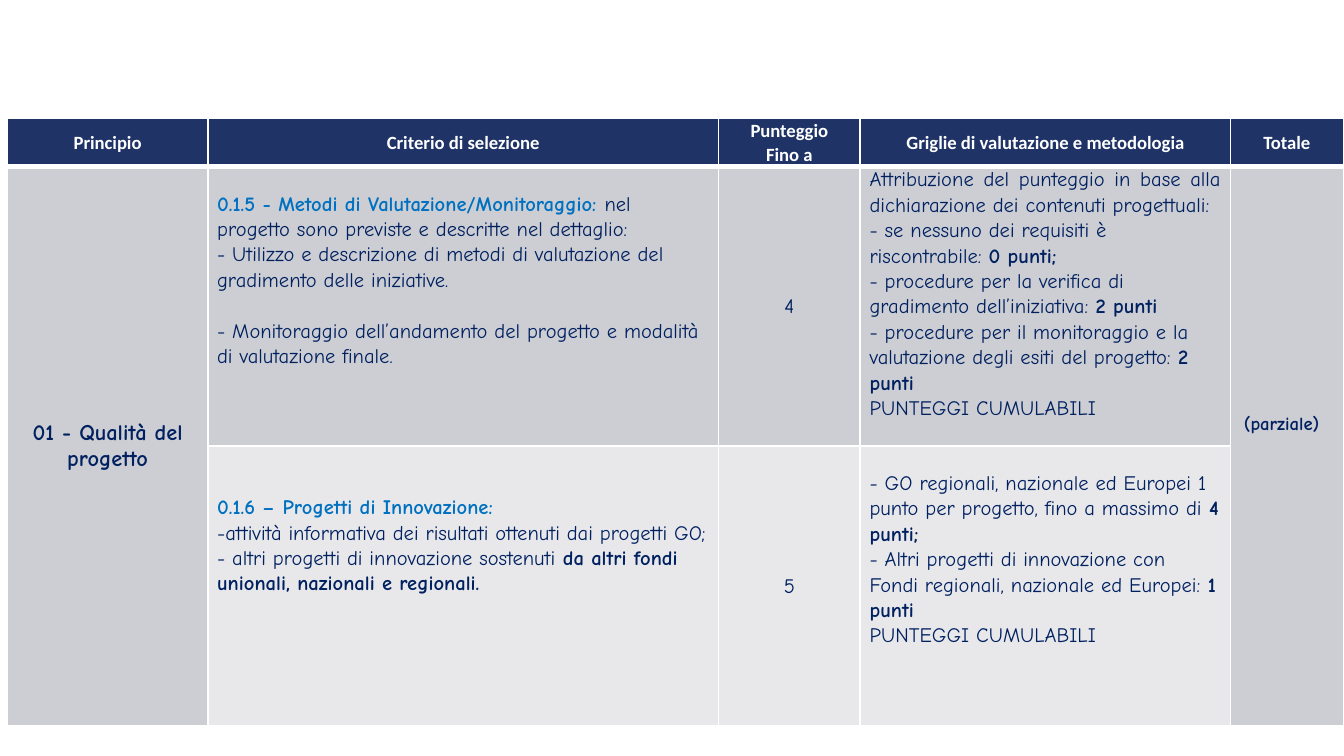
from lxml.etree import SubElement
from pptx import Presentation
from pptx.dml.color import RGBColor
from pptx.enum.text import MSO_ANCHOR as Anchor, PP_ALIGN as Align
from pptx.oxml.ns import qn
from pptx.util import Inches, Pt

COLORS = {
    "paper": "FEFFFE", "header": "1F3366", "dark": "CDCED3",
    "light": "E8E8EA", "navy": "002060", "sky": "0070C0",
}
LINE = 13.6  # height of one body line in points
INDENT_TOP = 0.18  # inches left free above a lowered text, per line
COLUMNS = (14.9, 38, 10.55, 27.55, 8.4)  # percent of slide width
ROWS = (6.22, 36.98, 36.98)  # percent of slide height
HEADINGS = (
    ["Principio"],
    ["Criterio di selezione"],
    ["Punteggio", "Fino a"],
    ["Griglie di valutazione e metodologia"],
    ["Totale"],
)


def plain(text):
    return text, "navy", False


def strong(text):
    return text, "navy", True


def accent(text):
    return text, "sky", True


class SlideBuilder:
    """Holds the style and the current slide; lengths are percent of the slide."""

    body_font = "Comic Neue"
    header_font = "Calibri"

    def __init__(self, deck):
        self.deck = deck
        self.page = deck.slides.add_slide(deck.slide_layouts[6])
        self.paint(self.page.background.fill, "paper")

    def x(self, percent):
        return round(self.deck.slide_width * percent / 100)

    def y(self, percent):
        return round(self.deck.slide_height * percent / 100)

    def paint(self, fill, color):
        fill.solid()
        fill.fore_color.rgb = RGBColor.from_string(COLORS[color])

    def table(self, left, top, columns, rows):
        frame = self.page.shapes.add_table(
            len(rows), len(columns), self.x(left), self.y(top),
            self.x(sum(columns)), self.y(sum(rows)))
        grid = frame.table
        grid.first_row = grid.horz_banding = False
        for column, width in zip(grid.columns, columns):
            column.width = self.x(width)
        for row, height in zip(grid.rows, rows):
            row.height = self.y(height)
        return grid

    def surface(self, cell, color, bottom=1):
        """Give a cell its borders and fill."""
        props = cell._tc.get_or_add_tcPr()
        for side, width in (("L", 1), ("R", 1), ("T", 1), ("B", bottom)):
            line = SubElement(props, qn(f"a:ln{side}"), w=str(Pt(width)))
            fill = SubElement(line, qn("a:solidFill"))
            SubElement(fill, qn("a:srgbClr"), val=COLORS["paper"])
        self.paint(cell.fill, color)

    def margins(self, cell, side=0.07, top=0, bottom=0):
        cell.margin_left = cell.margin_right = Inches(side)
        cell.margin_top, cell.margin_bottom = Inches(top), Inches(bottom)

    def text(self, cell, paras, size=11, font=None, align=Align.LEFT,
             anchor=Anchor.TOP, spacing=1.07, justified=(), gaps=()):
        """Write lists of (text, color, bold) runs; justified and gaps hold indexes."""
        cell.vertical_anchor = anchor
        frame = cell.text_frame
        for index, runs in enumerate(paras):
            para = frame.add_paragraph() if index else frame.paragraphs[0]
            para.alignment = Align.JUSTIFY if index in justified else align
            para.line_spacing = spacing
            if index in gaps:
                para.space_before = Pt(LINE)
            for words, color, bold in runs:
                span = para.add_run()
                span.text = words
                span.font.name = font or self.body_font
                span.font.size = Pt(size)
                span.font.bold = bold
                span.font.color.rgb = RGBColor.from_string(COLORS[color])


def main():
    deck = Presentation()
    deck.slide_width = Inches(10)
    deck.slide_height = deck.slide_width * 9 // 16
    builder = SlideBuilder(deck)
    grid = builder.table(0.56, 15.64, COLUMNS, ROWS)
    last = len(COLUMNS) - 1

    for column, lines in enumerate(HEADINGS):
        cell = grid.cell(0, column)
        builder.surface(cell, "header", bottom=3)
        builder.margins(cell)
        builder.text(cell, [[(line, "paper", True)] for line in lines], size=10,
                     font=builder.header_font, align=Align.CENTER,
                     anchor=Anchor.MIDDLE)

    for row, color in ((1, "dark"), (2, "light")):
        for column in range(len(COLUMNS)):
            merged = column in (0, last)
            builder.surface(grid.cell(row, column), "dark" if merged else color)
            builder.margins(grid.cell(row, column))
    for column in (0, last):
        grid.cell(1, column).merge(grid.cell(2, column))

    principle, total = grid.cell(1, 0), grid.cell(1, last)
    builder.margins(principle, side=0.1, top=0.05, bottom=0.05)
    builder.text(principle, [[strong("01 - Qualità del progetto")]], size=12,
                 align=Align.CENTER, anchor=Anchor.MIDDLE, spacing=1.0)
    builder.margins(total, side=0.1, top=0.05, bottom=0.37)
    builder.text(total, [[strong("(parziale)")]], size=10,
                 anchor=Anchor.MIDDLE, spacing=1.0)

    for row, points in ((1, "4"), (2, "5")):
        builder.text(grid.cell(row, 2), [[plain(points)]],
                     align=Align.CENTER, anchor=Anchor.MIDDLE)

    monitoring, innovation = grid.cell(1, 1), grid.cell(2, 1)
    builder.margins(monitoring, top=INDENT_TOP)
    builder.text(monitoring, [
        [accent("0.1.5 - Metodi di Valutazione/Monitoraggio: "),
         plain("nel progetto sono previste e descritte nel dettaglio:")],
        [plain("- Utilizzo e descrizione di metodi di valutazione del "
               "gradimento delle iniziative.")],
        [plain("- Monitoraggio dell’andamento del progetto e modalità "
               "di valutazione finale.")],
    ], gaps=(2,))
    builder.margins(innovation, top=2 * INDENT_TOP)
    builder.text(innovation, [
        [accent("0.1.6 – Progetti di Innovazione:")],
        [plain("-attività informativa dei risultati ottenuti dai progetti GO;")],
        [plain("- altri progetti di innovazione sostenuti "),
         strong("da altri fondi unionali, nazionali e regionali.")],
    ])

    builder.text(grid.cell(1, 3), [
        [plain("Attribuzione del punteggio in base alla dichiarazione "
               "dei contenuti progettuali:")],
        [plain("- se nessuno dei requisiti è riscontrabile: "), strong("0 punti;")],
        [plain("- procedure per la verifica di gradimento dell’iniziativa: "),
         strong("2 punti")],
        [plain("- procedure per il monitoraggio e la valutazione degli esiti "
               "del progetto: "), strong("2 punti")],
        [plain("PUNTEGGI CUMULABILI")],
    ], justified=(0, 4))
    builder.margins(grid.cell(2, 3), top=INDENT_TOP)
    builder.text(grid.cell(2, 3), [
        [plain("- GO regionali, nazionale ed Europei 1 punto per progetto, "
               "fino a massimo di "), strong("4 punti;")],
        [plain("- Altri progetti di innovazione con Fondi regionali, nazionale "
               "ed Europei: "), strong("1 punti")],
        [plain("PUNTEGGI CUMULABILI")],
    ], justified=(2,))

    deck.save("out.pptx")


if __name__ == "__main__":
    main()
